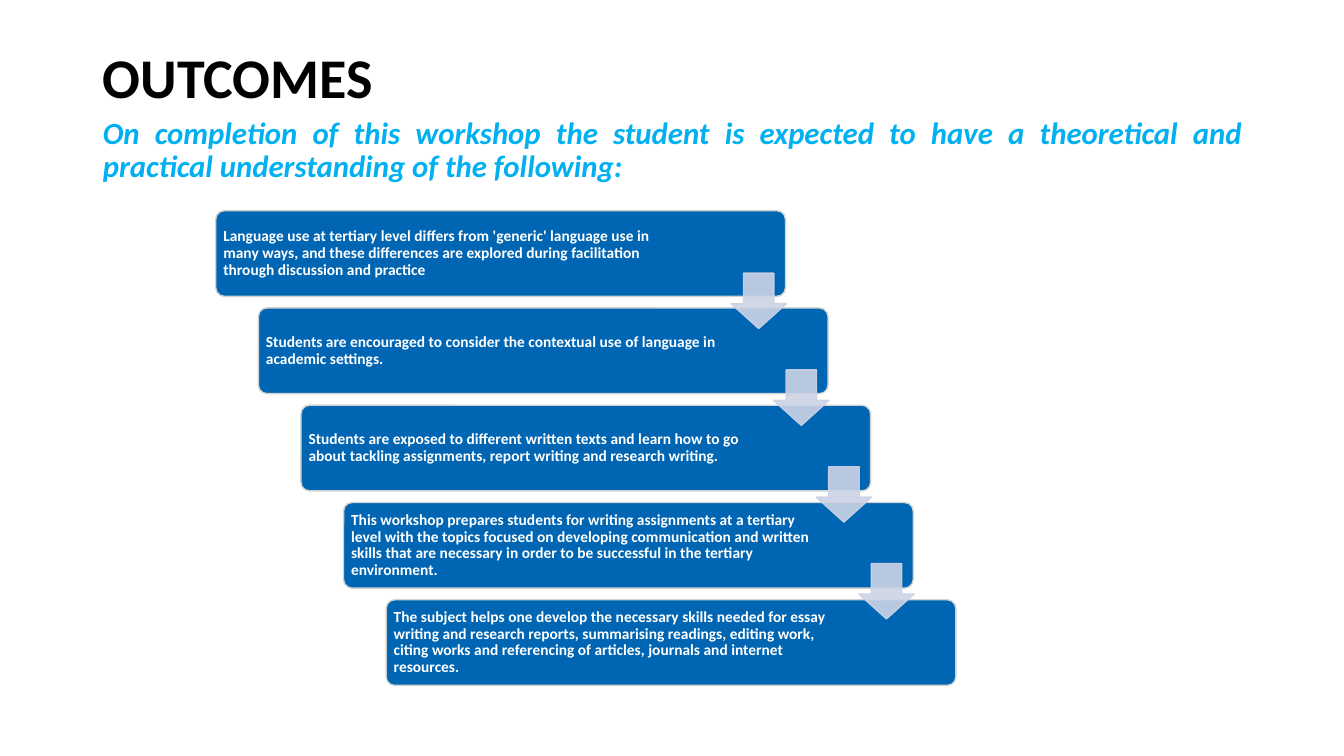
"""Build the workshop outcomes slide with a staircase of five linked steps."""
import pptx
import pptx.dml.color
import pptx.enum.shapes
import pptx.enum.text
import pptx.oxml
import pptx.oxml.ns
import pptx.util
from pptx.util import Inches

RGBColor = pptx.dml.color.RGBColor
BLACK = RGBColor(0x00, 0x00, 0x00)
WHITE = RGBColor(0xFF, 0xFF, 0xFF)
SKY = RGBColor(0x00, 0xB0, 0xF0)
BLUE = RGBColor(0x00, 0x66, 0xB3)
GREY = RGBColor(0xD1, 0xD3, 0xD3)
PALE = RGBColor(0xCC, 0xD3, 0xE5)

OUTCOMES = [
    "Language use at tertiary level differs from 'generic' language use in many ways, "
    "and these differences are explored during facilitation through discussion and practice",
    "Students are encouraged to consider the contextual use of language in academic settings.",
    "Students are exposed to different written texts and learn how to go about tackling "
    "assignments, report writing and research writing.",
    "This workshop prepares students for writing assignments at a tertiary level with the "
    "topics focused on developing communication and written skills that are necessary in "
    "order to be successful in the tertiary environment.",
    "The subject helps one develop the necessary skills needed for essay writing and research "
    "reports, summarising readings, editing work, citing works and referencing of articles, "
    "journals and internet resources.",
]
STEP_X = 1.69 / 4
STEP_Y = 3.86 / 4


def write(shape, text, size, color, anchor, alignment):
    frame = shape.text_frame
    frame.word_wrap = True
    frame.auto_size = pptx.enum.text.MSO_AUTO_SIZE.NONE
    frame.vertical_anchor = anchor
    frame.text = text
    paragraph = frame.paragraphs[0]
    paragraph.alignment = alignment
    paragraph.line_spacing = 0.9
    paragraph.space_before = pptx.util.Pt(0)
    paragraph.font.name = "Calibri"
    paragraph.font.size = pptx.util.Pt(size)
    paragraph.font.bold = True
    paragraph.font.color.rgb = color
    return paragraph


def add_step_shape(kind, left, top, width, height, fill, line):
    shape = slide.shapes.add_shape(
        kind, Inches(left), Inches(top), Inches(width), Inches(height))
    shape.shadow.inherit = False
    shape.fill.solid()
    shape.fill.fore_color.rgb = fill
    shape.line.color.rgb = line
    shape.line.width = pptx.util.Pt(1)
    return shape


presentation = pptx.Presentation()
presentation.slide_width = Inches(13.33)
presentation.slide_height = Inches(7.5)
slide = presentation.slides.add_slide(presentation.slide_layouts[1])

ANCHOR = pptx.enum.text.MSO_ANCHOR
ALIGN = pptx.enum.text.PP_ALIGN
SHAPE = pptx.enum.shapes.MSO_SHAPE

title = slide.shapes.title
title.left, title.top = Inches(0.92), Inches(0.08)
title.width, title.height = Inches(11.5), Inches(1.43)
write(title, "OUTCOMES", 40, BLACK, ANCHOR.MIDDLE, ALIGN.LEFT)

body = slide.placeholders[1]
body.left, body.top = Inches(0.92), Inches(1.12)
body.width, body.height = Inches(11.5), Inches(0.89)
introduction = write(
    body,
    "On completion of this workshop the student is expected to have a theoretical and "
    "practical understanding of the following:",
    22, SKY, ANCHOR.TOP, ALIGN.JUSTIFY)
introduction.font.italic = True
introduction.space_after = pptx.util.Pt(6)
properties = introduction._p.get_or_add_pPr()
properties.set("marL", "0")
properties.set("indent", "0")
no_bullet = pptx.oxml.parse_xml(
    f'<a:buNone {pptx.oxml.ns.nsdecls("a")}/>')
properties.find(pptx.oxml.ns.qn("a:defRPr")).addprevious(no_bullet)

for index, outcome in enumerate(OUTCOMES):
    box = add_step_shape(
        SHAPE.ROUNDED_RECTANGLE, 2.14 + index * STEP_X, 2.09 + index * STEP_Y,
        5.65, 0.85, BLUE, GREY)
    box.adjustments[0] = 0.1
    write(box, outcome, 11, WHITE, ANCHOR.MIDDLE, ALIGN.LEFT)
    frame = box.text_frame
    frame.margin_left, frame.margin_right = Inches(0.05), Inches(1)
    frame.margin_top = frame.margin_bottom = Inches(0.05)

for index in range(len(OUTCOMES) - 1):
    arrow = add_step_shape(
        SHAPE.DOWN_ARROW, 7.25 + index * STEP_X, 2.71 + index * 0.96,
        0.55, 0.55, PALE, PALE)
    arrow.adjustments[0] = 0.55
    arrow.adjustments[1] = 0.45
    for color in arrow._element.spPr.iter(pptx.oxml.ns.qn("a:srgbClr")):
        color.append(pptx.oxml.parse_xml(
            f'<a:alpha {pptx.oxml.ns.nsdecls("a")} val="90000"/>'))

presentation.save("out.pptx")
